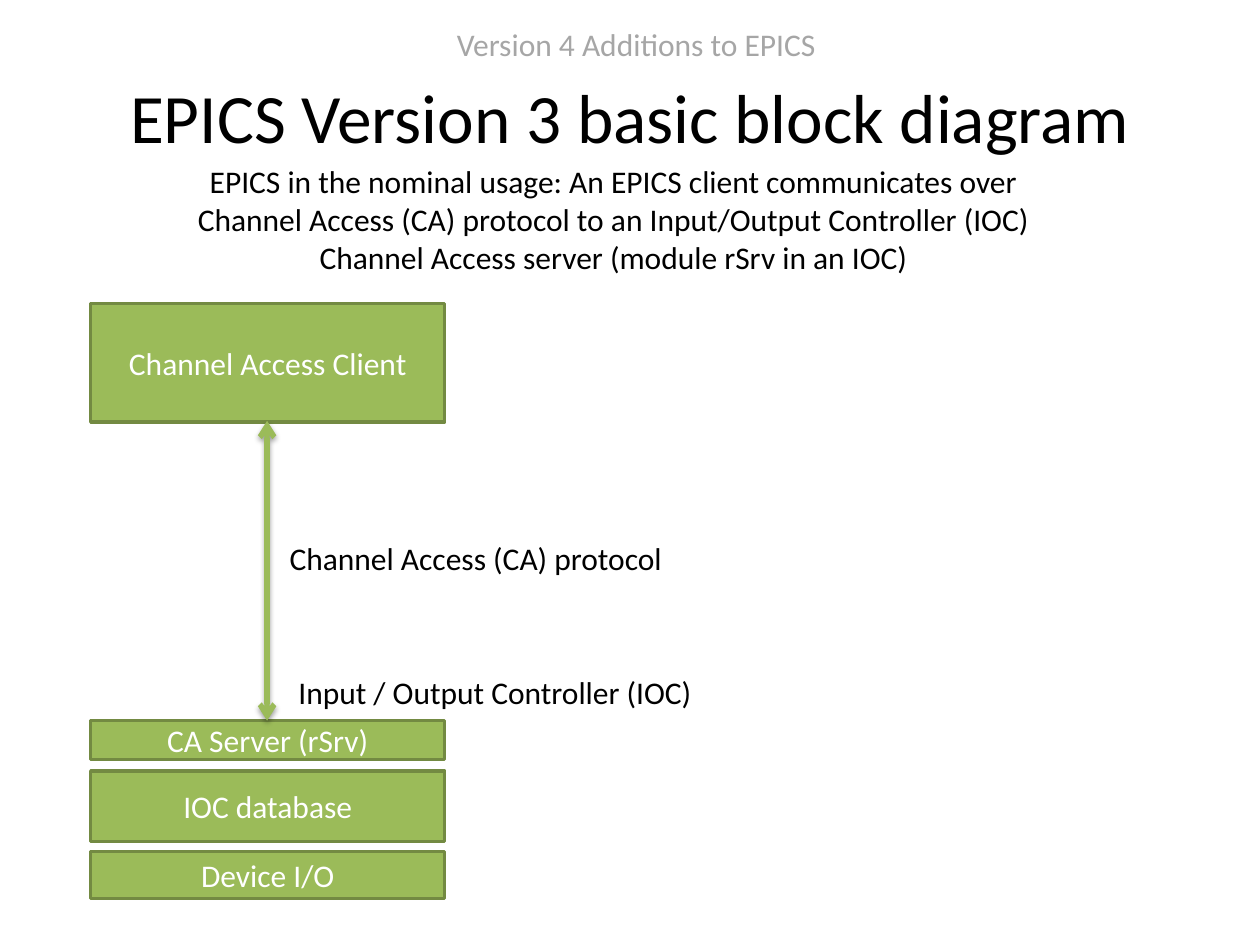
from lxml import etree
from pptx import Presentation
from pptx.dml.color import RGBColor
from pptx.enum.shapes import MSO_CONNECTOR, MSO_SHAPE
from pptx.enum.text import MSO_ANCHOR, PP_ALIGN
from pptx.oxml.ns import qn
from pptx.util import Pt

PX = 9144  # 100 px to the inch
RECT, LINE = MSO_SHAPE.RECTANGLE, MSO_CONNECTOR.STRAIGHT
LEFT, MID = PP_ALIGN.LEFT, PP_ALIGN.CENTER
TOP, CENTER = MSO_ANCHOR.TOP, MSO_ANCHOR.MIDDLE
COLORS = {"ink": "000000", "gray": "A6A6A6", "white": "FFFFFF",
          "green": "9BBB59", "edge": "738A42"}


def color(name):
    return RGBColor.from_string(COLORS[name])


class Board:
    def __init__(self, slide, font="Calibri", size=18):
        self.slide, self.font, self.size = slide, font, size

    def set_text(self, shape, text, ink, align, anchor, size=None, wrap=True):
        frame = shape.text_frame
        frame.word_wrap = wrap
        frame.vertical_anchor = anchor
        para = frame.paragraphs[0]
        para.text = text
        para.alignment = align
        para.font.name = self.font
        para.font.size = Pt(size or self.size)
        para.font.color.rgb = color(ink)

    def label(self, box, text, ink="ink", align=MID, anchor=TOP, size=None, wrap=True):
        shape = self.slide.shapes.add_textbox(*(v * PX for v in box))
        self.set_text(shape, text, ink, align, anchor, size, wrap)

    def block(self, box, text):
        shape = self.slide.shapes.add_shape(RECT, *(v * PX for v in box))
        shape.shadow.inherit = False
        shape.fill.solid()
        shape.fill.fore_color.rgb = color("green")
        shape.line.color.rgb = color("edge")
        shape.line.width = Pt(2)
        self.set_text(shape, text, "white", MID, CENTER)

    def arrow(self, x, top, end):
        link = self.slide.shapes.add_connector(LINE, x * PX, top * PX, x * PX, end * PX)
        link.line.color.rgb = color("green")
        link.line.width = Pt(3)
        props = link.element.spPr
        stroke = props.find(qn("a:ln"))
        for tag in ("a:headEnd", "a:tailEnd"):
            etree.SubElement(stroke, qn(tag), type="arrow")
        # Soft shadow straight below
        effects = etree.SubElement(props, qn("a:effectLst"))
        shade = etree.SubElement(effects, qn("a:outerShdw"), blurRad=str(int(Pt(3.1))),
                                 dist=str(int(Pt(1.6))), dir="5400000", rotWithShape="0")
        tone = etree.SubElement(shade, qn("a:srgbClr"), val=COLORS["ink"])
        etree.SubElement(tone, qn("a:alpha"), val="38000")


def main():
    deck = Presentation()
    deck.slide_width, deck.slide_height = 1000 * PX, 750 * PX
    board = Board(deck.slides.add_slide(deck.slide_layouts[6]))

    # Headings
    board.label((50, 62, 900, 59), "EPICS Version 3 basic block diagram",
                anchor=CENTER, size=39.6)
    board.label((227, 15, 556, 43), "Version 4 Additions to EPICS", "gray")
    board.label((117, 124, 740, 101),
                "EPICS in the nominal usage: An EPICS client communicates over "
                "Channel Access (CA) protocol to an Input/Output Controller (IOC) "
                "Channel Access server (module rSrv in an IOC)")

    # Client above the controller stack
    left, width = 72, 281
    for top, height, text in ((241, 94, "Channel Access Client"),
                              (572, 31, "CA Server (rSrv)"),
                              (612, 56, "IOC database"),
                              (676, 37, "Device I/O")):
        board.block((left, top, width, height), text)

    # Protocol link and its labels
    board.arrow(212, 334, 572)
    board.label((220, 423, 320, 40), "Channel Access (CA) protocol",
                align=LEFT, wrap=False)
    board.label((227, 529, 336, 40), "Input / Output Controller (IOC)",
                align=LEFT, wrap=False)

    deck.save("out.pptx")


if __name__ == "__main__":
    main()
